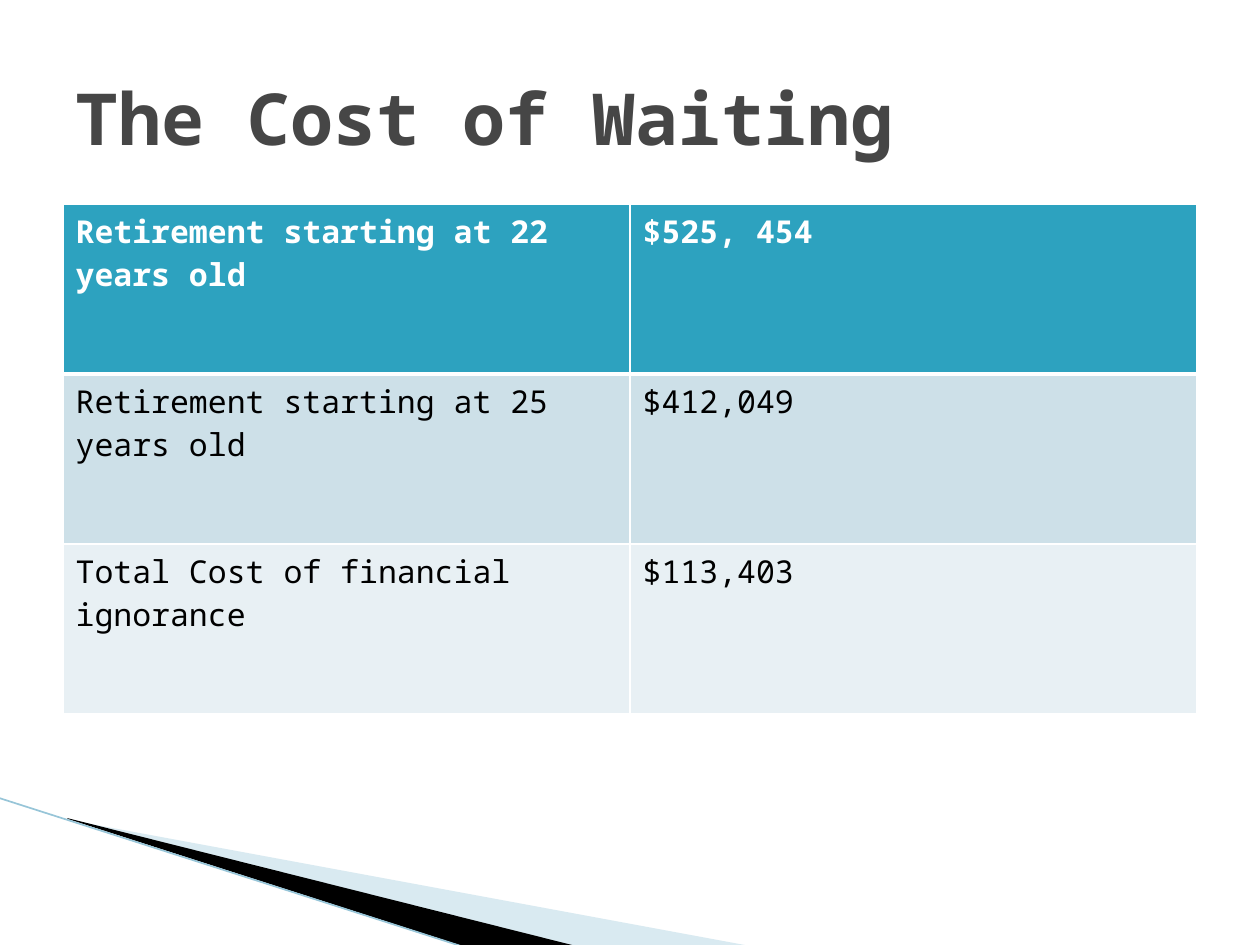
"""Build the slide "The Cost of Waiting" with its table and corner wedges."""
import lxml.etree
import pptx
import pptx.dml.color
import pptx.enum.shapes
import pptx.enum.text
import pptx.oxml
import pptx.oxml.ns
import pptx.util

FONT = "Noto Sans Mono"
COLORS = {
    "title": "464646", "white": "FFFFFF", "black": "000000",
    "header": "2DA2BF", "band": "CDE0E8", "plain": "E8F0F4",
    "wedge": "A0CBDC", "edge": "97C5D8",
}
TITLE = "The Cost of Waiting"
COSTS = [
    ("Retirement starting at 22 years old", "$525, 454"),
    ("Retirement starting at 25 years old", "$412,049"),
    ("Total Cost of financial ignorance", "$113,403"),
]
ROW_STYLES = [("header", "white", True), ("band", "black", False), ("plain", "black", False)]
WEDGES = [
    ("wedge", 40, [(69, 820), (750, 946), (575, 946), (69, 819)]),
    ("black", 100, [(67, 818), (576, 946), (469, 948), (68, 819)]),
]
EDGE = [(-1, 798), (467, 948)]
LEFT, WIDTH = 63, 1134
TITLE_TOP, TITLE_HEIGHT = 38, 157
TABLE_TOP, ROW_HEIGHT = 204, 170
SCALE = 914400 / 126


def px(length):
    return pptx.util.Emu(round(length * SCALE))


def rgb(name):
    return pptx.dml.color.RGBColor.from_string(COLORS[name])


def write(paragraph, text, size, color, bold):
    run = paragraph.add_run()
    run.text = text
    run.font.name = FONT
    run.font.size = pptx.util.Pt(size)
    run.font.bold = bold
    run.font.color.rgb = rgb(color)


def add_border(cell, side, points):
    cell._tc.get_or_add_tcPr().append(pptx.oxml.parse_xml(
        f'<a:ln{side} {pptx.oxml.ns.nsdecls("a")} w="{pptx.util.Pt(points)}">'
        f'<a:solidFill><a:srgbClr val="{COLORS["white"]}"/></a:solidFill></a:ln{side}>'))


def add_wedge(slide, color, opacity, points):
    builder = slide.shapes.build_freeform(*points[0], scale=SCALE)
    builder.add_line_segments(points[1:], close=True)
    wedge = builder.convert_to_shape()
    wedge.shadow.inherit = False
    wedge.fill.solid()
    wedge.fill.fore_color.rgb = rgb(color)
    wedge.line.fill.background()
    if opacity < 100:
        tint = wedge._element.spPr.find(".//" + pptx.oxml.ns.qn("a:srgbClr"))
        lxml.etree.SubElement(tint, pptx.oxml.ns.qn("a:alpha"), val=str(opacity * 1000))


def add_edge(slide):
    (x1, y1), (x2, y2) = EDGE
    edge = slide.shapes.add_connector(
        pptx.enum.shapes.MSO_CONNECTOR.STRAIGHT, px(x1), px(y1), px(x2), px(y2))
    edge.line.color.rgb = rgb("edge")
    edge.line.width = pptx.util.Pt(0.95)
    lxml.etree.SubElement(edge._element.spPr, pptx.oxml.ns.qn("a:effectLst"))


def add_costs(slide):
    costs = slide.shapes.add_table(
        len(COSTS), len(COSTS[0]), px(LEFT), px(TABLE_TOP),
        px(WIDTH), px(ROW_HEIGHT * len(COSTS))).table
    for index, (texts, (fill, color, bold)) in enumerate(zip(COSTS, ROW_STYLES)):
        costs.rows[index].height = px(ROW_HEIGHT)
        borders = {"L": 1, "R": 1, "T": 3 if index == 1 else 1, "B": 3 if index == 0 else 1}
        for cell, text in zip(costs.rows[index].cells, texts):
            for side, points in borders.items():
                add_border(cell, side, points)
            cell.fill.solid()
            cell.fill.fore_color.rgb = rgb(fill)
            write(cell.text_frame.paragraphs[0], text, 18, color, bold)


def add_title(slide):
    title = slide.shapes.title
    title.left, title.top = px(LEFT), px(TITLE_TOP)
    title.width, title.height = px(WIDTH), px(TITLE_HEIGHT)
    title.text_frame.vertical_anchor = pptx.enum.text.MSO_ANCHOR.MIDDLE
    heading = title.text_frame.paragraphs[0]
    heading.alignment = pptx.enum.text.PP_ALIGN.LEFT
    write(heading, TITLE, 41, "title", True)


def main():
    deck = pptx.Presentation()
    deck.slide_width, deck.slide_height = px(1260), px(945)
    slide = deck.slides.add_slide(deck.slide_layouts[5])
    for color, opacity, points in WEDGES:
        add_wedge(slide, color, opacity, points)
    add_edge(slide)
    add_costs(slide)
    add_title(slide)
    deck.save("out.pptx")


if __name__ == "__main__":
    main()
